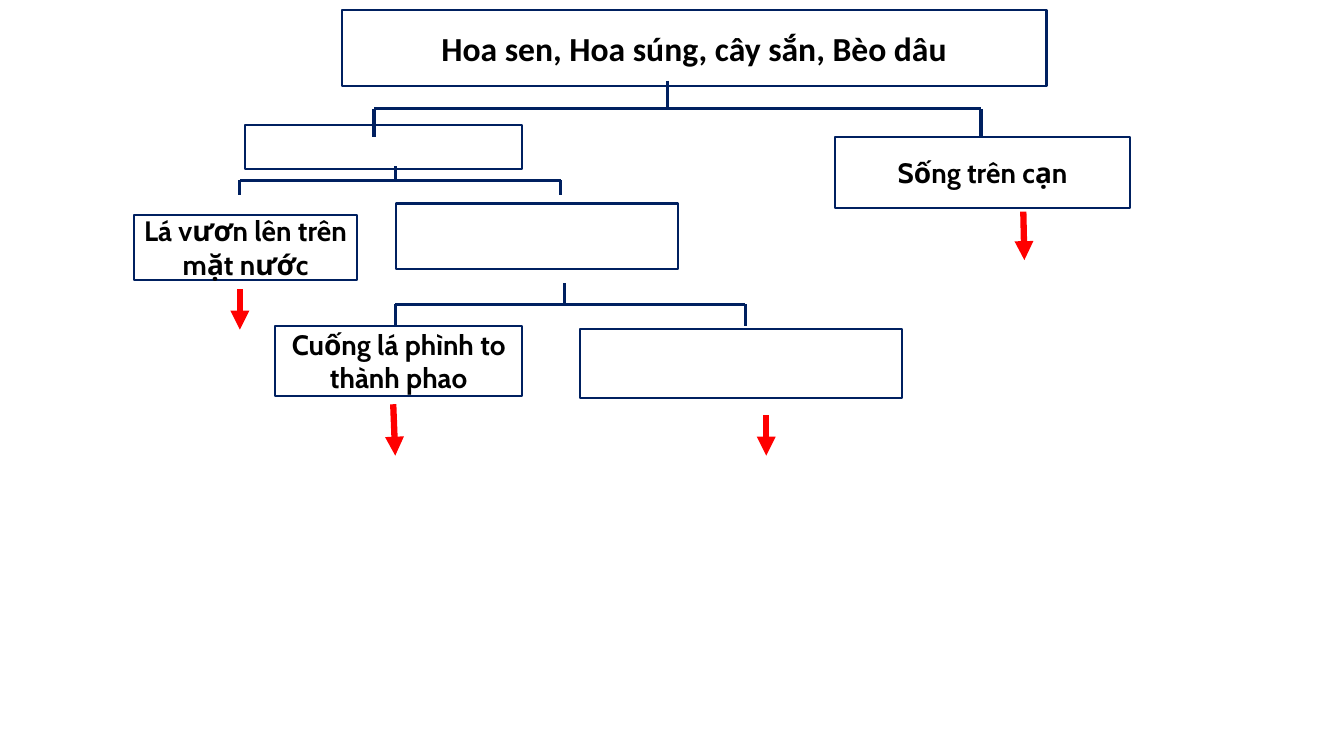
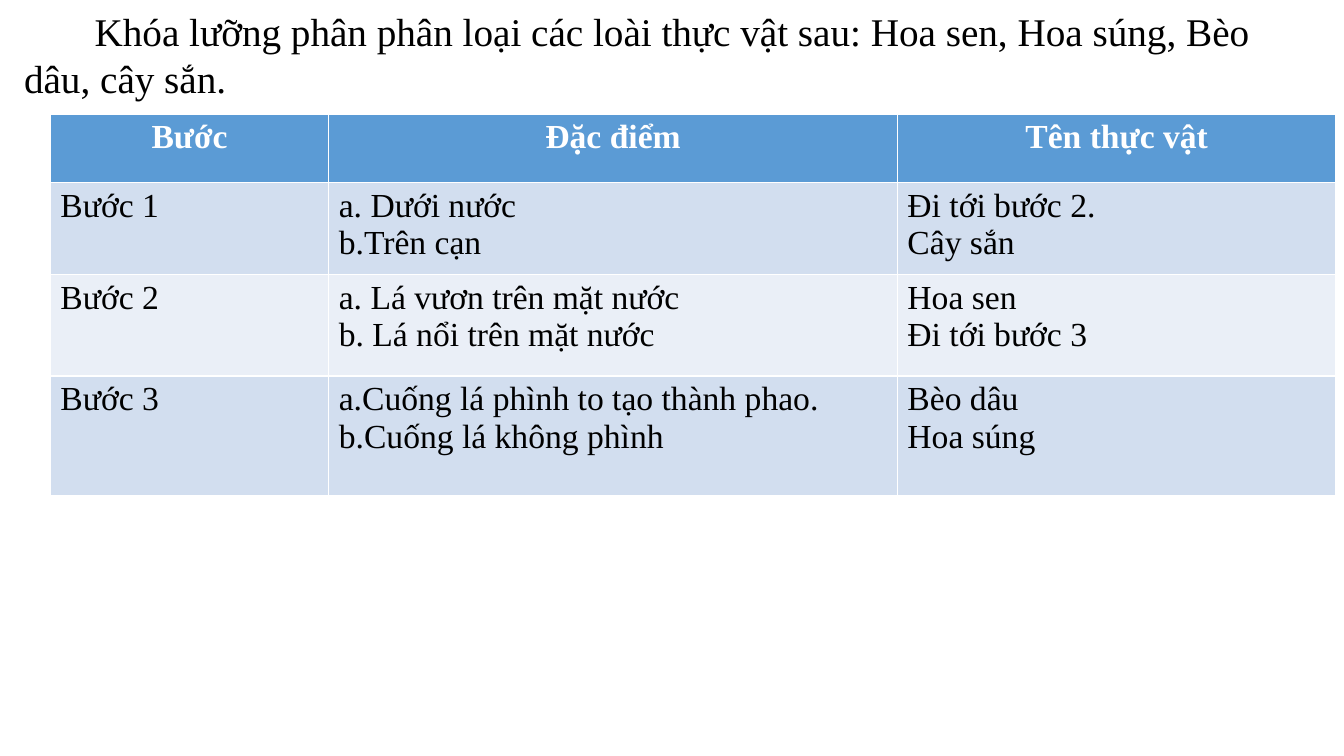
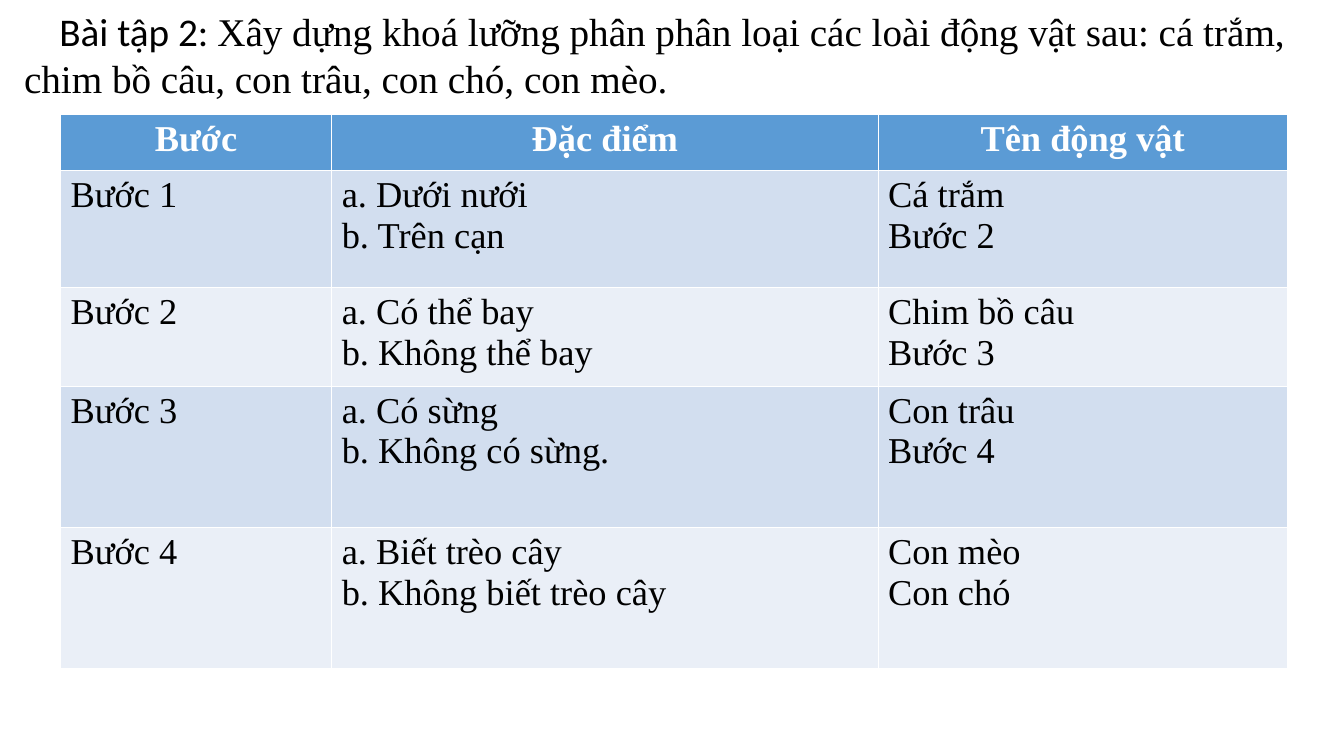
from lxml.etree import SubElement
from pptx import Presentation
from pptx.dml.color import RGBColor
from pptx.enum.shapes import MSO_CONNECTOR, MSO_SHAPE
from pptx.enum.text import MSO_ANCHOR, MSO_AUTO_SIZE, PP_ALIGN
from pptx.oxml.ns import qn
from pptx.util import Inches, Pt

HUE = {
    "navy": "002060",
    "red": "FF0000",
    "black": "000000",
    "white": "FFFFFF",
    "head": "5B9BD5",
    "odd": "D2DEEF",
    "even": "EAEFF7",
}
SERIF, SANS, LABEL = "Times New Roman", "Calibri", "Cabin"

deck = Presentation()
deck.slide_width, deck.slide_height = Inches(13.33), Inches(7.5)
COL, ROW = deck.slide_width / 100, deck.slide_height / 100
blank = deck.slide_layouts[6]


def style(font, size, hue, bold=False, name=None):
    font.size, font.bold = Pt(size), bold
    font.color.rgb = RGBColor.from_string(HUE[hue])
    if name:
        font.name = name


def link(slide, x1, y1, x2, y2, hue, width):
    line = slide.shapes.add_connector(
        MSO_CONNECTOR.STRAIGHT,
        int(x1 * COL), int(y1 * ROW), int(x2 * COL), int(y2 * ROW))
    line.line.color.rgb = RGBColor.from_string(HUE[hue])
    line.line.width = Pt(width)
    SubElement(line._element.spPr, qn("a:effectLst"))
    return line


tree = deck.slides.add_slide(blank)

boxes = [
    (25.43, 1.33, 52.44, 10, "Hoa sen, Hoa súng, cây sắn, Bèo dâu", 24, SANS),
    (18.23, 16.53, 20.63, 5.87, "", 20, LABEL),
    (62.12, 18.13, 21.98, 9.33, "Sống trên cạn", 20, LABEL),
    (9.98, 28.4, 16.58, 8.67, "Lá vươn lên trên mặt nước", 20, LABEL),
    (20.48, 43.07, 18.38, 9.33, "Cuống lá phình to thành phao", 20, LABEL),
    (29.48, 26.93, 21, 8.67, "", 20, LABEL),
    (43.14, 43.47, 24, 9.2, "", 20, LABEL),
]
for x, y, w, h, text, size, name in boxes:
    box = tree.shapes.add_shape(
        MSO_SHAPE.RECTANGLE,
        int(x * COL), int(y * ROW), int(w * COL), int(h * ROW))
    box.shadow.inherit = False
    box.fill.solid()
    box.fill.fore_color.rgb = RGBColor.from_string(HUE["white"])
    box.line.color.rgb = RGBColor.from_string(HUE["navy"])
    box.line.width = Pt(1.5)
    if text:
        frame = box.text_frame
        frame.word_wrap = True
        frame.vertical_anchor = MSO_ANCHOR.MIDDLE
        para = frame.paragraphs[0]
        para.text, para.alignment = text, PP_ALIGN.CENTER
        style(para.font, size, "black", True, name)

arrows = [
    (17.85, 38.27, 17.85, 43.6),
    (57.01, 54.93, 57.01, 60.27),
    (76.14, 28, 76.22, 34.4),
    (29.26, 53.47, 29.41, 60.27),
]
for ends in arrows:
    arrow = link(tree, *ends, "red", 4.5)
    SubElement(arrow.line._get_or_add_ln(), qn("a:tailEnd"), type="triangle")

forks = [
    (27.83, 72.99, 49.66, 14.4, 3.73),
    (17.85, 41.71, 29.41, 23.87, 1.87),
    (29.41, 55.44, 42.01, 40.27, 2.8),
]
for left, right, stem, bar, drop in forks:
    link(tree, left, bar, right, bar, "navy", 2.25)
    link(tree, stem, bar - drop, stem, bar, "navy", 2.25)
    for x in (left, right):
        link(tree, x, bar, x, bar + drop, "navy", 2.25)

keys = [
    {
        "title": [("Khóa lưỡng phân phân loại các loài thực vật sau: "
                   "Hoa sen, Hoa súng, Bèo dâu, cây sắn.", SERIF)],
        "indent": 5.25, "left": 3.75, "size": 24,
        "cols": [20.71, 42.31, 32.63],
        "rows": [9.07, 12.13, 13.47, 15.87],
        "cells": [
            ("Bước", "Đặc điểm", "Tên thực vật"),
            ("Bước 1", "a. Dưới nước\nb.Trên cạn", "Đi tới bước 2.\nCây sắn"),
            ("Bước 2", "a. Lá vươn trên mặt nước\nb. Lá nổi trên mặt nước",
             "Hoa sen\nĐi tới bước 3"),
            ("Bước 3", "a.Cuống lá phình to tạo thành phao.\n"
             "b.Cuống lá không phình", "Bèo dâu\nHoa súng"),
        ],
    },
    {
        "title": [("Bài tập 2: ", SANS),
                  ("Xây dựng khoá lưỡng phân phân loại các loài động vật sau: "
                   "cá trắm, chim bồ câu, con trâu, con chó, con mèo.", SERIF)],
        "indent": 2.63, "left": 4.5, "size": 26,
        "cols": [20.18, 40.66, 30.46],
        "rows": [7.47, 15.47, 13.07, 18.67, 18.67],
        "cells": [
            ("Bước", "Đặc điểm", "Tên động vật"),
            ("Bước 1", "a. Dưới nưới\nb. Trên cạn", "Cá trắm\nBước 2"),
            ("Bước 2", "a. Có thể bay\nb. Không thể bay",
             "Chim bồ câu\nBước 3"),
            ("Bước 3", "a. Có sừng\nb. Không có sừng.", "Con trâu\nBước 4"),
            ("Bước 4", "a. Biết trèo cây\nb. Không biết trèo cây",
             "Con mèo\nCon chó"),
        ],
    },
]
for key in keys:
    slide = deck.slides.add_slide(blank)
    title = slide.shapes.add_textbox(
        int(1.05 * COL), int(0.27 * ROW), int(96.25 * COL), int(20.13 * ROW))
    frame = title.text_frame
    frame.word_wrap = True
    frame.auto_size = MSO_AUTO_SIZE.SHAPE_TO_FIT_TEXT
    para = frame.paragraphs[0]
    para._p.get_or_add_pPr().set("indent", str(int(key["indent"] * COL)))
    style(para.font, 28, "black")
    for text, name in key["title"]:
        run = para.add_run()
        run.text, run.font.name = text, name

    cols, rows = key["cols"], key["rows"]
    table = slide.shapes.add_table(
        len(rows), len(cols), int(key["left"] * COL), int(15.07 * ROW),
        int(sum(cols) * COL), int(sum(rows) * ROW)).table
    for col, width in zip(table.columns, cols):
        col.width = int(width * COL)
    for row, high in zip(table.rows, rows):
        row.height = int(high * ROW)
    for r, texts in enumerate(key["cells"]):
        top = r == 0
        fill = "head" if top else "odd" if r % 2 else "even"
        for c, text in enumerate(texts):
            cell = table.cell(r, c)
            cell.fill.solid()
            cell.fill.fore_color.rgb = RGBColor.from_string(HUE[fill])
            cell.text = text
            for para in cell.text_frame.paragraphs:
                para.alignment = PP_ALIGN.CENTER if top else PP_ALIGN.LEFT
                style(para.font, key["size"], "white" if top else "black",
                      top, SERIF)

deck.save("out.pptx")
